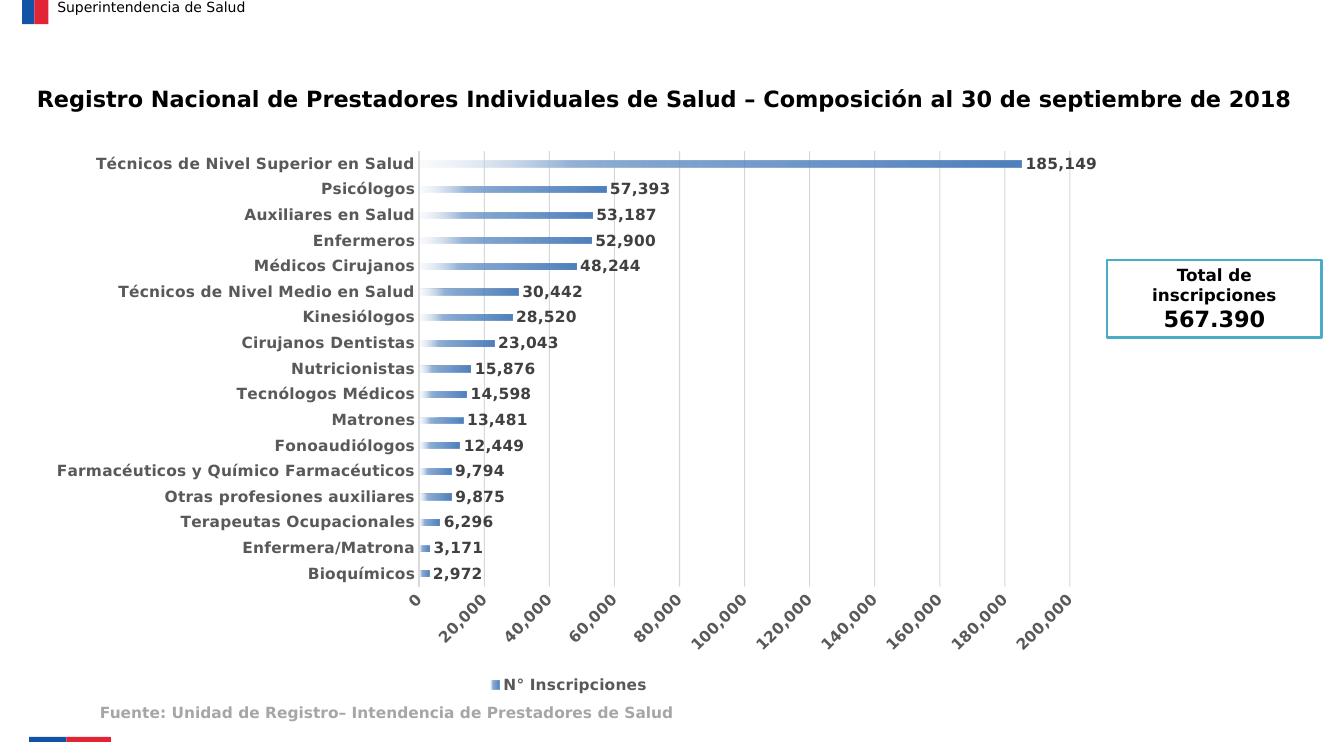
from lxml import etree
from pptx import Presentation, util as u
from pptx.chart.data import CategoryChartData
from pptx.dml.color import RGBColor
from pptx.enum import chart as ch, shapes, text
from pptx.oxml import parse_xml
from pptx.oxml.ns import nsdecls, qn

PX = 9144  # 100 px to the inch
FONT = "DejaVu Sans"
BLUE = RGBColor(0x11, 0x53, 0xA5)
RED = RGBColor(0xE2, 0x24, 0x37)
BLACK = RGBColor(0, 0, 0)
WHITE = RGBColor(255, 255, 255)
TEAL = RGBColor(0x4B, 0xAC, 0xC6)
SOURCE_GREY = RGBColor(0xA6, 0xA6, 0xA6)
AXIS_TEXT = RGBColor(0x59, 0x59, 0x59)
LABEL_TEXT = RGBColor(0x40, 0x40, 0x40)
AXIS_LINE = RGBColor(0xD9, 0xD9, 0xD9)
GRID = RGBColor(0xBF, 0xBF, 0xBF)


def style(font, size, color, bold=True):
    font.name, font.size, font.bold = FONT, u.Pt(size), bold
    font.color.rgb = color


def write(paragraph, words, size, color=BLACK, bold=True, align=text.PP_ALIGN.CENTER):
    paragraph.alignment = align
    run = paragraph.add_run()
    run.text = words
    style(run.font, size, color, bold)


prs = Presentation()
prs.slide_width, prs.slide_height = 1333 * PX, 750 * PX
slide = prs.slides.add_slide(prs.slide_layouts[6])

# Blue and red bands at the top and bottom: left, top, blue width, red width, height
for left, top, blue_w, red_w, height in [(22, 0, 12, 14, 24), (29, 731, 37, 44, 5)]:
    flag = slide.shapes.add_group_shape()
    for x, width, color in [(left, blue_w, BLUE), (left + blue_w, red_w, RED)]:
        band = flag.shapes.add_shape(shapes.MSO_SHAPE.RECTANGLE,
                                     x * PX, top * PX, width * PX, height * PX)
        band.shadow.inherit = False
        band.fill.solid()
        band.fill.fore_color.rgb = color
        band.line.fill.background()

# Institution, title and source
institution = slide.shapes.add_textbox(47 * PX, -10 * PX, 427 * PX, 34 * PX).text_frame
institution.word_wrap = True
institution.vertical_anchor = text.MSO_ANCHOR.MIDDLE
write(institution.paragraphs[0], "Superintendencia de Salud", 10, bold=False,
      align=text.PP_ALIGN.LEFT)

title = slide.shapes.add_textbox(18 * PX, 80 * PX, 1282 * PX, 37 * PX).text_frame
title.word_wrap = False
write(title.paragraphs[0], "Registro Nacional de Prestadores Individuales de Salud – "
      "Composición al 30 de septiembre de 2018", 16)

source = slide.shapes.add_textbox(-26 * PX, 693 * PX, 820 * PX, 29 * PX).text_frame
source.word_wrap = True
write(source.paragraphs[0],
      "Fuente: Unidad de Registro– Intendencia de Prestadores de Salud", 11, SOURCE_GREY)

# Total box
total = slide.shapes.add_shape(shapes.MSO_SHAPE.RECTANGLE,
                               1098 * PX, 258 * PX, 213 * PX, 77 * PX)
total.shadow.inherit = False
total.fill.solid()
total.fill.fore_color.rgb = WHITE
total.line.color.rgb = TEAL
total.line.width = u.Pt(2)
total.text_frame.word_wrap = True
total.text_frame.vertical_anchor = text.MSO_ANCHOR.TOP
write(total.text_frame.paragraphs[0], "Total de inscripciones", 12)
write(total.text_frame.add_paragraph(), "567.390", 16)

# Registrations by profession, from the bottom bar up
registrations = [
    ("Bioquímicos", 2972),
    ("Enfermera/Matrona", 3171),
    ("Terapeutas Ocupacionales", 6296),
    ("Otras profesiones auxiliares", 9875),
    ("Farmacéuticos y Químico Farmacéuticos", 9794),
    ("Fonoaudiólogos", 12449),
    ("Matrones", 13481),
    ("Tecnólogos Médicos", 14598),
    ("Nutricionistas", 15876),
    ("Cirujanos Dentistas", 23043),
    ("Kinesiólogos", 28520),
    ("Técnicos de Nivel Medio en Salud", 30442),
    ("Médicos Cirujanos", 48244),
    ("Enfermeros", 52900),
    ("Auxiliares en Salud", 53187),
    ("Psicólogos", 57393),
    ("Técnicos de Nivel Superior en Salud", 185149),
]
data = CategoryChartData(number_format="#,##0")
data.categories = [profession for profession, count in registrations]
data.add_series("N° Inscripciones", [count for profession, count in registrations])
chart = slide.shapes.add_chart(ch.XL_CHART_TYPE.BAR_CLUSTERED,
                               35 * PX, 139 * PX, 1058 * PX, 554 * PX, data).chart
style(chart.font, 11, BLACK)
chart.has_title = False
chart.has_legend = True
chart.legend.position = ch.XL_LEGEND_POSITION.BOTTOM
chart.legend.include_in_layout = False
style(chart.legend.font, 11, AXIS_TEXT)

# Axes
professions, counts = chart.category_axis, chart.value_axis
for axis in (professions, counts):
    axis.major_tick_mark = axis.minor_tick_mark = ch.XL_TICK_MARK.NONE
    style(axis.tick_labels.font, 11, AXIS_TEXT)
professions.has_major_gridlines = False
professions.format.line.color.rgb = AXIS_LINE
professions.format.line.width = u.Pt(1.5)
counts.minimum_scale, counts.maximum_scale, counts.major_unit = 0, 200000, 20000
counts.tick_labels.number_format = "#,##0"
counts.tick_labels.number_format_is_linked = False
counts.format.line.fill.background()
grid_line = counts.major_gridlines.format.line
grid_line.color.rgb = GRID
grid_line.width = u.Pt(0.75)
grid_color = next(counts.major_gridlines._xAx.iter(qn("a:srgbClr")))
etree.SubElement(grid_color, qn("a:alpha")).set("val", "60000")
counts._element.find(qn("c:txPr")).find(qn("a:bodyPr")).set("rot", "-2700000")

# Bars, fading towards the axis: position, colour, opacity in percent
plot = chart.plots[0]
plot.gap_width, plot.overlap, plot.vary_by_categories = 326, -58, False
bars = plot.series[0]
stops = [(0, "4F81BD", 100), (51, "4F81BD", 75), (75, "95B3D7", 100), (100, "DCE6F2", 15)]
stop_xml = "".join(
    f'<a:gs pos="{pos * 1000}"><a:srgbClr val="{color}">'
    f'<a:alpha val="{opacity * 1000}"/></a:srgbClr></a:gs>' for pos, color, opacity in stops)
bars.format.line.fill.background()
bars._element.find(qn("c:spPr")).insert(0, parse_xml(
    f'<a:gradFill {nsdecls("a")}><a:gsLst>{stop_xml}</a:gsLst>'
    '<a:lin ang="10800000" scaled="0"/></a:gradFill>'))
labels = bars.data_labels
labels.show_value = True
labels.position = ch.XL_LABEL_POSITION.OUTSIDE_END
labels.number_format, labels.number_format_is_linked = "#,##0", False
style(labels.font, 11, LABEL_TEXT)

# Plot area as fractions of the chart
plot_area = chart._chartSpace.chart.plotArea
for old_layout in plot_area.findall(qn("c:layout")):
    plot_area.remove(old_layout)
edges = "".join(f'<c:{tag} val="{value}"/>' for tag, value in [
    ("layoutTarget", "inner"), ("xMode", "edge"), ("yMode", "edge"),
    ("x", 0.36), ("y", 0.02), ("w", 0.61), ("h", 0.78)])
plot_area.insert(0, parse_xml(
    f'<c:layout {nsdecls("c")}><c:manualLayout>{edges}</c:manualLayout></c:layout>'))

prs.save("out.pptx")
